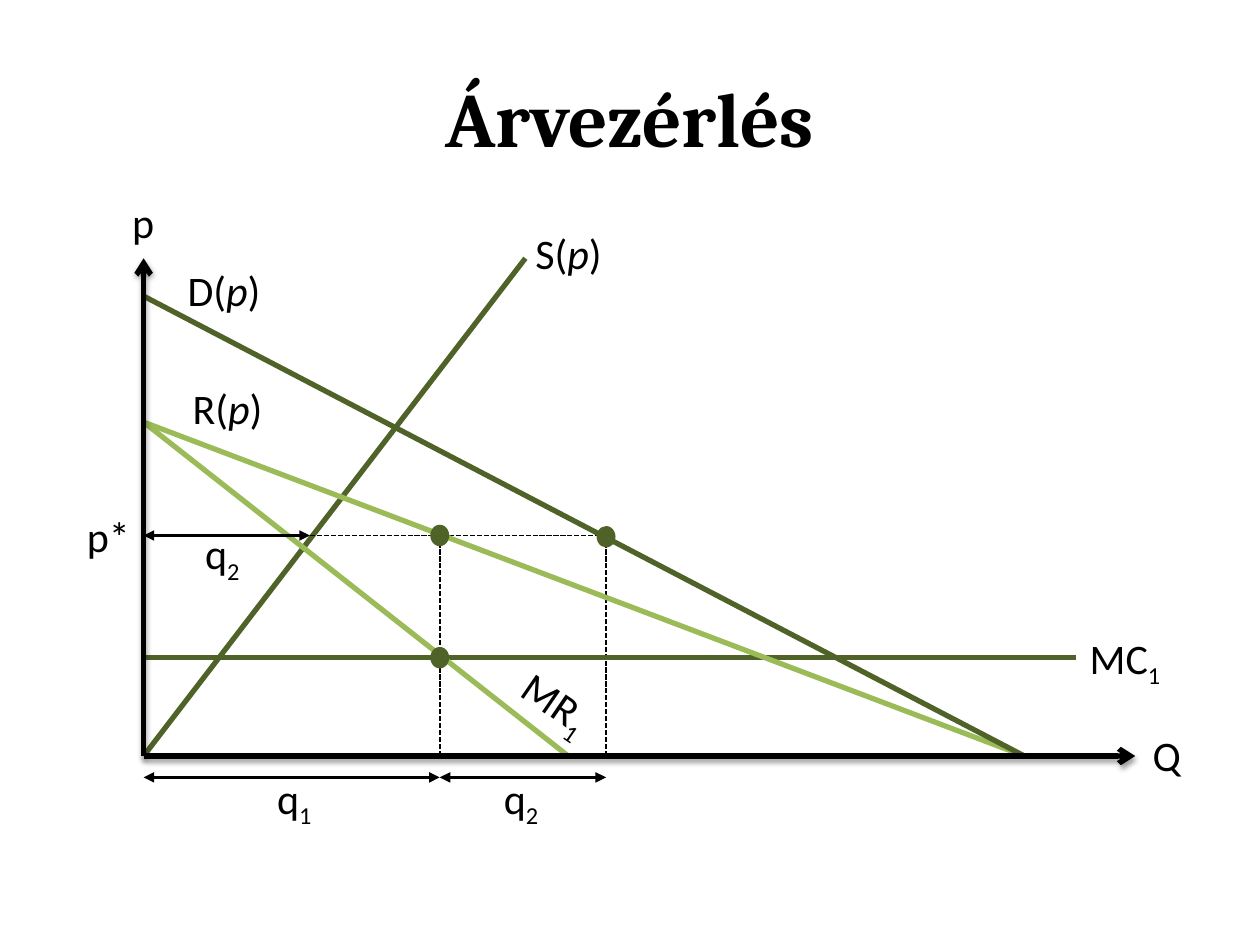
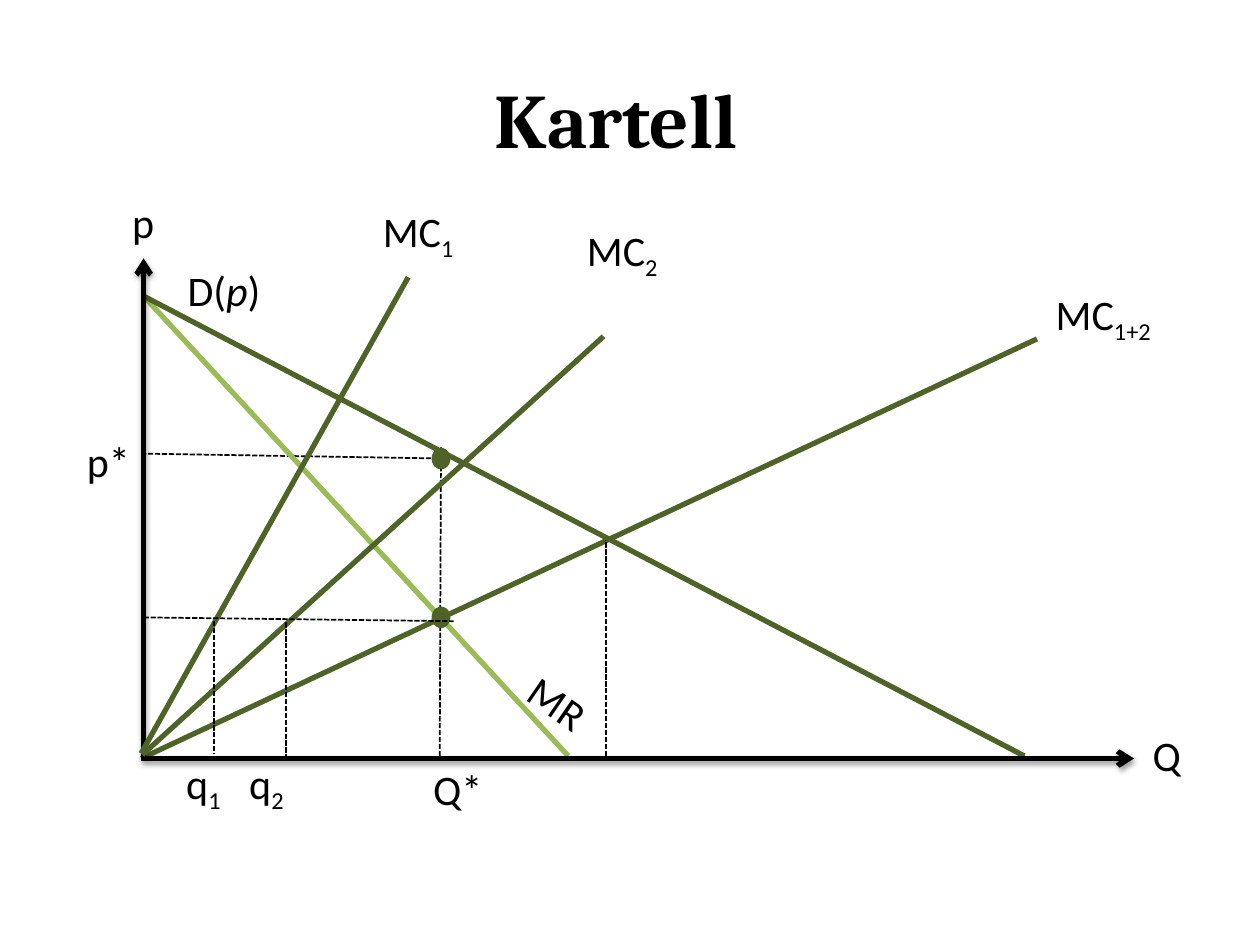
"""Build two economics slides: price leadership and cartel diagrams."""
from dataclasses import dataclass
from typing import Any

from lxml import etree
from pptx import Presentation
from pptx import util as u
from pptx.dml.color import RGBColor
from pptx.enum import dml, shapes, text
from pptx.oxml import ns

BLACK = RGBColor(0x00, 0x00, 0x00)
DARK_GREEN = RGBColor(0x4F, 0x62, 0x28)
LIGHT_GREEN = RGBColor(0x9B, 0xBB, 0x59)

TITLE_FONT = {"name": "Cambria", "size": u.Pt(44), "bold": True}
LABEL_FONT = {"name": "Calibri", "size": u.Pt(24)}
DARK_CURVE = {"color": DARK_GREEN, "width": 3}
LIGHT_CURVE = {"color": LIGHT_GREEN, "width": 3}
GUIDE = {"width": 1, "dashed": True}
AXIS = {"width": 3, "tail": "arrow", "shadow": True}
SPAN = {"width": 2, "head": "triangle", "tail": "triangle"}

ORIGIN = (1.14, 6)
DEMAND = (0, 3.65, 6.99, 0)
LABEL_HEIGHT = 0.5
TAB_STOP = 0.5
DOT_WIDTH, DOT_HEIGHT = 0.15, 0.17
SLOPE_ANGLE = 34.6


def set_attributes(target, values):
    """Set every attribute named in the dict of format values."""
    for name, value in values.items():
        setattr(target, name, value)


def add_xml(parent, tag, **attributes):
    """Append a DrawingML element and return it."""
    return etree.SubElement(parent, ns.qn(tag), attributes)


def subscripted(base, index):
    """Return the runs of a symbol with an index."""
    return [(base, ""), (index, "sub")]


def price_function(name):
    """Return the runs of a function of the price."""
    return [(name + "(", ""), ("p", "italic"), (")", "")]


@dataclass
class Diagram:
    """A diagram measured right and up from its origin."""

    slide: Any
    left: float
    bottom: float

    def place(self, right, up):
        """Turn diagram inches into slide lengths."""
        return u.Inches(self.left + right), u.Inches(self.bottom - up)

    def line(self, ends, color=BLACK, width=1, dashed=False, head=None, tail=None, shadow=False):
        """Draw a line between two points."""
        connector = self.slide.shapes.add_connector(
            shapes.MSO_CONNECTOR.STRAIGHT, *self.place(*ends[:2]), *self.place(*ends[2:]))
        connector.line.color.rgb = color
        connector.line.width = u.Pt(width)
        if dashed:
            connector.line.dash_style = dml.MSO_LINE.SQUARE_DOT
        outline = connector.line._get_or_add_ln()
        for tag, kind in (("a:headEnd", head), ("a:tailEnd", tail)):
            if kind:
                add_xml(outline, tag, type=kind)
        effects = add_xml(connector._element.spPr, "a:effectLst")
        if shadow:
            outer = add_xml(effects, "a:outerShdw", blurRad=str(u.Pt(3.1)), dist=str(u.Pt(1.6)),
                            dir="5400000", rotWithShape="0")
            shade = add_xml(outer, "a:srgbClr", val=str(BLACK))
            add_xml(shade, "a:alpha", val="38000")

    def lines(self, style, *all_ends):
        """Draw several lines in one style."""
        for ends in all_ends:
            self.line(ends, **style)

    def dots(self, *centers):
        """Mark points of the diagram."""
        for right, up in centers:
            dot = self.slide.shapes.add_shape(
                shapes.MSO_SHAPE.OVAL, *self.place(right - DOT_WIDTH / 2, up + DOT_HEIGHT / 2),
                u.Inches(DOT_WIDTH), u.Inches(DOT_HEIGHT))
            dot.shadow.inherit = False
            dot.fill.solid()
            dot.fill.fore_color.rgb = DARK_GREEN
            dot.line.fill.background()

    def label(self, right, up, width, runs, rotation=0, height=LABEL_HEIGHT):
        """Write a label whose top left corner is at the given point."""
        box = self.slide.shapes.add_textbox(
            *self.place(right, up), u.Inches(width), u.Inches(height))
        box.rotation = rotation
        set_attributes(box.text_frame, {
            "word_wrap": False, "auto_size": text.MSO_AUTO_SIZE.SHAPE_TO_FIT_TEXT})
        paragraph = box.text_frame.paragraphs[0]
        if any("\t" in words for words, _ in runs):
            tabs = add_xml(paragraph._p.get_or_add_pPr(), "a:tabLst")
            add_xml(tabs, "a:tab", pos=str(u.Inches(TAB_STOP)), algn="l")
        for words, style in runs:
            run = paragraph.add_run()
            run.text = words
            set_attributes(run.font, LABEL_FONT)
            run.font.color.rgb = BLACK
            if style == "italic":
                run.font.italic = True
            elif style == "sub":
                run.font._element.set("baseline", "-25000")

    def labels(self, *entries):
        """Write several labels."""
        for entry in entries:
            self.label(*entry)

    def axes(self, quantity_axis):
        """Draw the axes with their names and the demand label."""
        self.lines(AXIS, quantity_axis, (0, 0, 0, 3.95))
        self.labels((-0.19, 4.49, 0.38, [("p", "")]),
                    (7.91, 0.26, 0.44, [("Q", "")]),
                    (0.25, 3.95, 0.79, price_function("D")))


def add_title(slide, words, left, top):
    """Write the centred slide title."""
    box = slide.shapes.add_textbox(u.Inches(left), u.Inches(top), u.Inches(9), u.Inches(1.25))
    set_attributes(box.text_frame, {"word_wrap": True, "vertical_anchor": text.MSO_ANCHOR.MIDDLE})
    paragraph = box.text_frame.paragraphs[0]
    paragraph.alignment = text.PP_ALIGN.CENTER
    run = paragraph.add_run()
    run.text = words
    set_attributes(run.font, TITLE_FONT)
    run.font.color.rgb = BLACK


def draw_price_leadership(slide, left, bottom):
    """Draw the leader's residual demand and the followers' supply."""
    diagram = Diagram(slide, left, bottom)
    leader, total, follower = 2.35, 3.67, 1.32
    price, cost, choke = 1.75, 0.78, 2.65
    diagram.lines(DARK_CURVE, (0, 0, 3.03, 3.95))
    diagram.lines(GUIDE, (leader, 0, leader, price), (0, price, total, price),
                  (total, price, total, 0))
    diagram.lines(DARK_CURVE, (0, cost, 7.4, cost))
    diagram.lines(LIGHT_CURVE, (0, choke, 3.37, 0), (6.99, 0, 0, choke))
    diagram.lines(DARK_CURVE, DEMAND)
    diagram.axes((0, 0, 7.87, 0))
    diagram.dots((leader, price), (total, price - 0.01), (leader, cost))
    diagram.lines(SPAN, (0, -0.17, leader, -0.17), (leader, -0.17, total, -0.17),
                  (0, price, follower, price))
    diagram.labels((3.01, 4.24, 0.74, price_function("S")),
                   (7.41, 1.03, 0.78, subscripted("MC", "1")),
                   (0.29, 3.01, 0.79, price_function("R")),
                   (2.76, -0.08, 0.49, subscripted("q", "2")),
                   (0.39, 1.86, 0.49, subscripted("q", "2")),
                   (2.9, 0.67, 0.79, subscripted("MR", "1"), SLOPE_ANGLE),
                   (0.96, -0.08, 0.49, subscripted("q", "1")),
                   (-0.55, 2, 0.55, [("p*", "")]))


def draw_cartel(slide, left, bottom):
    """Draw the joint marginal cost and the members' shares."""
    diagram = Diagram(slide, left, bottom)
    diagram.lines(DARK_CURVE, (-0.02, -0.02, 7.09, 3.31))
    diagram.lines(GUIDE, (2.35, 0, 2.36, 2.45), (-0.02, 2.4, 2.43, 2.36), (3.67, 1.75, 3.67, 0))
    diagram.lines(LIGHT_CURVE, (0, 3.65, 3.37, 0))
    diagram.lines(DARK_CURVE, DEMAND)
    diagram.axes((-0.02, -0.02, 7.86, -0.02))
    diagram.dots((2.36, 2.36), (2.36, 1.1))
    diagram.lines(DARK_CURVE, (-0.02, 0.02, 2.1, 3.8), (-0.01, 0.01, 3.65, 3.33))
    diagram.lines(GUIDE, (0, 1.1, 2.46, 1.07), (0.56, 1.07, 0.56, 0.02),
                  (1.13, 1.06, 1.13, -0.03))
    diagram.labels((7.14, 3.76, 1.01, subscripted("MC", "1+2")),
                   (1.8, 4.42, 0.78, subscripted("MC", "1")),
                   (3.42, 4.27, 0.8, subscripted("MC", "2")),
                   (2.96, 0.67, 0.67, [("MR", "")], SLOPE_ANGLE),
                   (0.24, 0.04, 1, subscripted("q", "1\t") + subscripted("q", "2"), 0, 0.77),
                   (-0.55, 2.59, 0.55, [("p*", "")]),
                   (2.2, -0.01, 0.6, [("Q*", "")]))


def main():
    """Build and save the presentation."""
    presentation = Presentation()
    set_attributes(presentation, {"slide_width": u.Inches(10), "slide_height": u.Inches(7.5)})
    for title, left, top, draw in (("Árvezérlés", 0.5, 0.3, draw_price_leadership),
                                   ("Kartell", 0.39, 0.31, draw_cartel)):
        slide = presentation.slides.add_slide(presentation.slide_layouts[6])
        add_title(slide, title, left, top)
        draw(slide, *ORIGIN)
    presentation.save("out.pptx")


if __name__ == "__main__":
    main()
